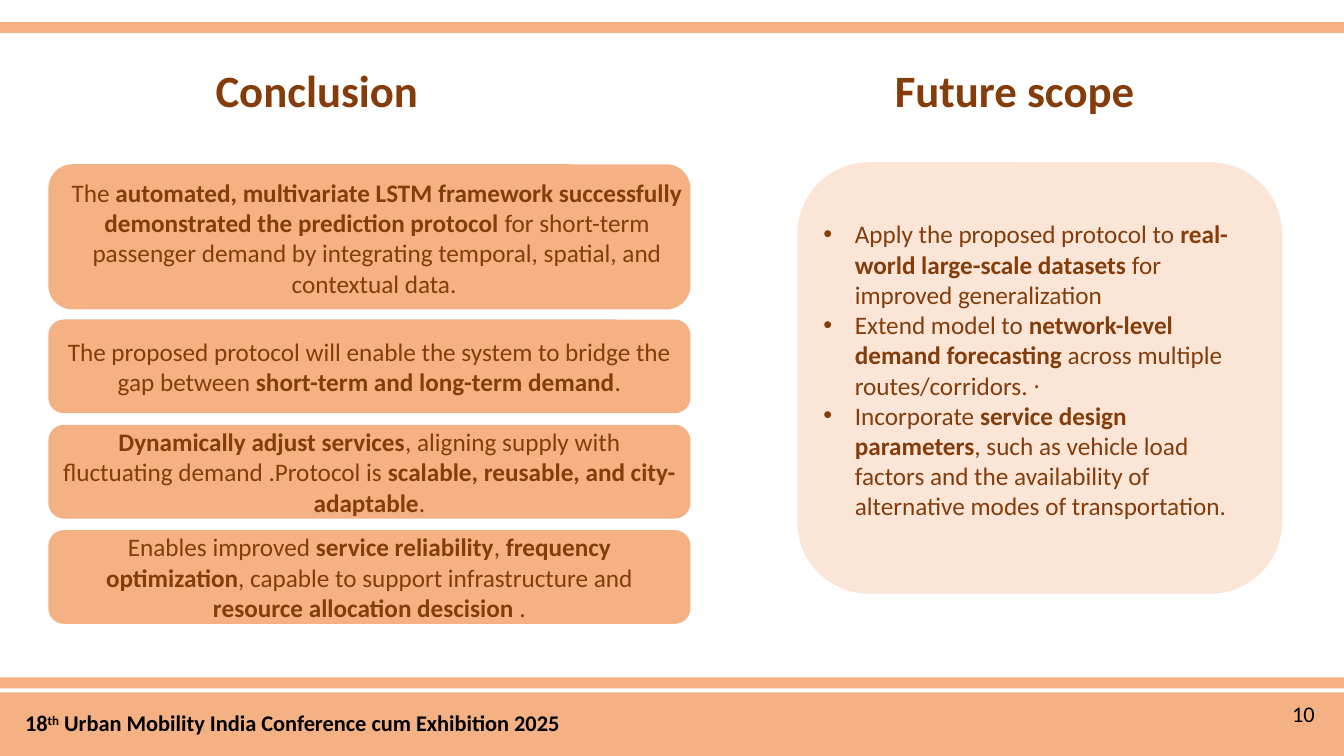
"""Builds the closing slide with the conclusions and the future scope."""
from pptx import Presentation
from pptx.dml.color import RGBColor
from pptx.enum.shapes import MSO_SHAPE as Shape
from pptx.enum.text import MSO_ANCHOR as Anchor, PP_ALIGN as Align
from pptx.oxml.ns import qn
from pptx.util import Pt
from lxml.etree import SubElement

PEACH = RGBColor(0xF4, 0xB1, 0x83)
PALE = RGBColor(0xFB, 0xE5, 0xD6)
BROWN = RGBColor(0x84, 0x3C, 0x0B)
BLACK = RGBColor(0, 0, 0)

deck = Presentation()
deck.slide_width, deck.slide_height = Pt(960), Pt(540)
slide = deck.slides.add_slide(deck.slide_layouts[6])


def block(kind, left, top, width, height, fill):
    shape = slide.shapes.add_shape(kind, Pt(left), Pt(top), Pt(width), Pt(height))
    shape.shadow.inherit = False
    shape.fill.solid()
    shape.fill.fore_color.rgb = fill
    shape.line.fill.background()
    return shape


def write(text, box=None, shape=None, size=18, color=BROWN, align=Align.LEFT,
          anchor=Anchor.TOP, bullet=False):
    """Each line is a paragraph; *stars* mark bold and ^carets^ superscript."""
    shape = shape or slide.shapes.add_textbox(*map(Pt, box))
    frame = shape.text_frame
    frame.word_wrap = True
    frame.vertical_anchor = anchor
    for row, line in enumerate(text.split("\n")):
        para = frame.paragraphs[0] if row == 0 else frame.add_paragraph()
        para.alignment = align
        if bullet:
            props = para._p.get_or_add_pPr()
            props.set("marL", str(Pt(22.5)))
            props.set("indent", str(-Pt(22.5)))
            SubElement(props, qn("a:buFont")).set("typeface", "Arial")
            SubElement(props, qn("a:buChar")).set("char", "•")
        for turn, part in enumerate(line.split("*")):
            for level, piece in enumerate(part.split("^")):
                if not piece:
                    continue
                run = para.add_run()
                run.text = piece
                font = run.font
                font.name, font.size, font.bold = "Calibri", Pt(size), turn % 2 == 1
                font.color.rgb = color
                if level % 2:
                    run._r.get_or_add_rPr().set("baseline", "30000")


for top, height in ((15.84, 7.92), (483.84, 7.92), (494.64, 45.36)):
    block(Shape.RECTANGLE, 0, top, 960, height, PEACH)
write("*18^th^\u00a0Urban Mobility India Conference cum Exhibition 2025*",
      (10.8, 503.28, 862.56, 26.64), size=16, color=BLACK)
write("10", (915.84, 496.8, 33.12, 26.64), size=16, color=BLACK)

for title, left in (("Conclusion", 146.88), ("Future scope", 632.16)):
    write(f"*{title}*", (left, 41.04, 316.8, 46.08), size=32)

block(Shape.ROUNDED_RECTANGLE, 34.56, 117.36, 458.64, 103.68, PEACH)
write("The *automated, multivariate LSTM framework successfully demonstrated "
      "the prediction protocol *for short-term passenger demand by integrating "
      "temporal, spatial, and contextual data. ",
      (34.56, 123.12, 469.44, 94.32), align=Align.CENTER)

points = (
    "The proposed protocol will enable the system to bridge the gap between "
    "*short-term and long-term demand*.",
    "*Dynamically adjust services*, aligning supply with fluctuating demand "
    ".Protocol is *scalable, reusable, and city-adaptable*.",
    "Enables improved *service reliability*, *frequency optimization*, capable to "
    "support infrastructure and *resource allocation descision *.",
)
for row, point in enumerate(points):
    card = block(Shape.ROUNDED_RECTANGLE, 34.56, 228.24 + row * 75.24, 458.64, 66.96, PEACH)
    write(point, shape=card, align=Align.CENTER, anchor=Anchor.MIDDLE)

panel = block(Shape.ROUNDED_RECTANGLE, 569.52, 115.92, 346.32, 308.16, PALE)
write(". ", shape=panel, align=Align.CENTER, anchor=Anchor.MIDDLE)
write("Apply the proposed protocol to *real-world large-scale datasets* for "
      "improved generalization\n"
      "Extend model to *network-level demand forecasting* across multiple "
      "routes/corridors.\n"
      "Incorporate *service design parameters*, such as vehicle load factors and "
      "the availability of alternative modes of transportation.",
      (581.04, 152.64, 316.8, 246.96), bullet=True)

deck.save("out.pptx")
